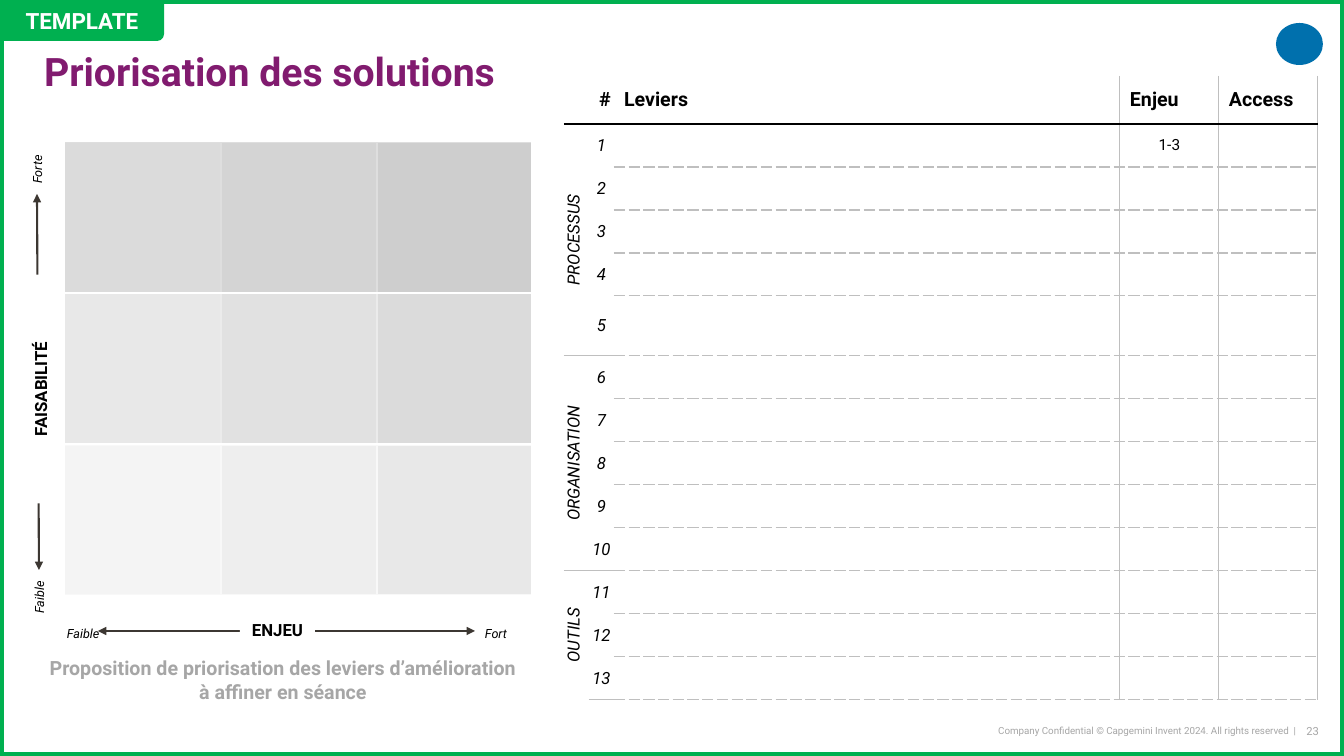
"""Build the solution prioritisation slide: a 3 x 3 matrix beside a table of levers."""
import pptx
import pptx.dml.color
import pptx.enum.dml
import pptx.enum.shapes
import pptx.enum.text
import pptx.oxml
import pptx.oxml.ns
import pptx.util

ALIGN = pptx.enum.text.PP_ALIGN
MIDDLE = pptx.enum.text.MSO_ANCHOR.MIDDLE
SHAPE = pptx.enum.shapes.MSO_SHAPE
FONT = "Roboto"
BLACK, WHITE, GREY, GREEN = "000000", "FFFFFF", "BFBFBF", "00B050"
SHADES = ["BFBFBF", "D9D9D9", "F2F2F2"]
rgb = pptx.dml.color.RGBColor.from_string


def px(*lengths):
    """Turn pixel lengths into EMU."""
    return [pptx.util.Emu(round(length * 914400 / 100.8)) for length in lengths]


def write(frame, text, size, color=BLACK, bold=False, italic=False, align=ALIGN.LEFT):
    """Put one formatted paragraph into a text frame."""
    para = frame.paragraphs[0]
    para.text = text
    para.alignment = align
    para.font.name = FONT
    para.font.size = pptx.util.Pt(size)
    para.font.bold = bold
    para.font.italic = italic
    para.font.color.rgb = rgb(color)


deck = pptx.Presentation()
deck.slide_width, deck.slide_height = px(1344, 756)
page = deck.slides.add_slide(deck.slide_layouts[5])

title = page.shapes.title
title.left, title.top, title.width, title.height = px(44, 34, 1207, 79)
frame = title.text_frame
frame.margin_left = frame.margin_right = frame.margin_top = frame.margin_bottom = 0
frame.vertical_anchor = MIDDLE
frame.auto_size = pptx.enum.text.MSO_AUTO_SIZE.NONE
write(frame, "Priorisation des solutions", 28, "811B6F", bold=True)
frame.paragraphs[0].line_spacing = 0.9

emblem = page.shapes.add_shape(SHAPE.OVAL, *px(1276, 23, 47, 42))
emblem.shadow.inherit = False
emblem.fill.solid()
emblem.fill.fore_color.rgb = rgb("0070AD")
emblem.line.fill.background()

columns = [(376 - 156 * i, 142, 157, 453, shade) for i, shade in enumerate(SHADES)]
rows = [(64, 141 + 152 * i - i // 2, 468, 152, shade) for i, shade in enumerate(SHADES)]
for *place, shade in columns + rows:
    band = page.shapes.add_shape(SHAPE.RECTANGLE, *px(*place))
    band.shadow.inherit = False
    band.fill.solid()
    band.fill.fore_color.rgb = rgb(shade)
    alpha = pptx.oxml.parse_xml(f'<a:alpha {pptx.oxml.ns.nsdecls("a")} val="50000"/>')
    band._element.spPr.find(".//" + pptx.oxml.ns.qn("a:srgbClr")).append(alpha)
    band.line.color.rgb = rgb(WHITE)
    band.line.width = pptx.util.Pt(2)

for ends in [(98, 631, 475, 631), (39, 570, 37, 194)]:
    axis = page.shapes.add_connector(pptx.enum.shapes.MSO_CONNECTOR.STRAIGHT, *px(*ends))
    axis.line.color.rgb = rgb("3C3732")
    axis.line.width = pptx.util.Pt(1.5)
    for tag in ("headEnd", "tailEnd"):
        axis.line._get_or_add_ln().append(pptx.oxml.parse_xml(
            f'<a:{tag} {pptx.oxml.ns.nsdecls("a")} type="triangle"/>'))
    axis._element.spPr.append(pptx.oxml.parse_xml(
        f'<a:effectLst {pptx.oxml.ns.nsdecls("a")}/>'))

for text, place, rotation in [("ENJEU", (240, 615, 75, 30), 0),
                              ("FAISABILITÉ", (-74, 374, 229, 30), 270)]:
    box = page.shapes.add_textbox(*px(*place))
    box.rotation = rotation
    box.fill.solid()
    box.fill.fore_color.rgb = rgb(WHITE)
    box.text_frame.word_wrap = True
    write(box.text_frame, text, 12, bold=True, align=ALIGN.CENTER)

for text, place, rotation in [("Fort", (475, 621, 44, 25), 0),
                              ("Faible", (57, 621, 54, 25), 0),
                              ("Forte", (12, 156, 50, 25), 270),
                              ("Faible", (12, 584, 54, 25), 270)]:
    box = page.shapes.add_textbox(*px(*place))
    box.rotation = rotation
    box.text_frame.word_wrap = False
    write(box.text_frame, text, 9, italic=True)

caption = page.shapes.add_textbox(*px(33, 651, 500, 57))
caption.text_frame.word_wrap = True
write(caption.text_frame,
      "Proposition de priorisation des leviers d’amélioration à affiner en séance",
      14, "A6A6A6", bold=True, align=ALIGN.CENTER)

groups = {1: ("PROCESSUS", 5), 6: ("ORGANISATION", 10), 11: ("OUTILS", 13)}
headings = ["", "#", "Leviers", "Enjeu", "Access"]
levers = page.shapes.add_table(14, 5, *px(564, 76, 754, 624)).table
levers.first_row = levers.horz_banding = False
for column, width in zip(levers.columns, px(25, 25, 506, 99, 99)):
    column.width = width
for row, height in zip(levers.rows, px(48, *[43] * 4, 60, *[43] * 8)):
    row.height = height

for r in range(14):
    for c in range(5):
        cell = levers.cell(r, c)
        properties = cell._tc.get_or_add_tcPr()
        edges = {"lnL": (GREY, "solid") if c > 2 else None,
                 "lnR": (GREY, "solid") if c > 1 else None}
        for side, edge in (("lnT", r), ("lnB", r + 1)):
            if edge == 1:
                edges[side] = (BLACK, "solid")
            elif edge and c > 1:
                edges[side] = (GREY, "lgDash")
            else:
                edges[side] = (GREY, "solid") if edge in (6, 11, 14) else None
        for side, style in edges.items():
            stroke = "<a:noFill/>"
            if style:
                stroke = (f'<a:solidFill><a:srgbClr val="{style[0]}"/></a:solidFill>'
                          f'<a:prstDash val="{style[1]}"/>')
            properties.append(pptx.oxml.parse_xml(
                f'<a:{side} {pptx.oxml.ns.nsdecls("a")} w="12700">{stroke}</a:{side}>'))
        cell.fill.solid()
        cell.fill.fore_color.rgb = rgb(WHITE)
        cell.vertical_anchor = MIDDLE
        if r == 0:
            write(cell.text_frame, headings[c], 14, bold=True,
                  align=ALIGN.CENTER if c == 1 else ALIGN.LEFT)
            continue
        if c < 2:
            cell.margin_left = cell.margin_right = 0
            cell.margin_top = cell.margin_bottom = 0
        if c == 1:
            write(cell.text_frame, str(r), 12, italic=True, align=ALIGN.CENTER)
        if c == 0 and r in groups:
            name, last = groups[r]
            cell.merge(levers.cell(last, 0))
            properties.set("vert", "vert270")
            write(cell.text_frame, name, 12, italic=True, align=ALIGN.CENTER)
write(levers.cell(1, 3).text_frame, "1-3", 11, align=ALIGN.CENTER)

for text, place, size, margin in [
        ("23", (1294, 719, 25, 24), 8, 5),
        ("Company Confidential © Capgemini Invent 2024. All rights reserved  |",
         (796, 719, 500, 24), 7, 0)]:
    box = page.shapes.add_textbox(*px(*place))
    frame = box.text_frame
    frame.word_wrap = True
    frame.margin_left = frame.margin_right = 0
    frame.margin_top, frame.margin_bottom = px(margin, margin)
    frame.vertical_anchor = MIDDLE
    write(frame, text, size, "A6A6A6", align=ALIGN.RIGHT)

border = page.shapes.add_shape(SHAPE.RECTANGLE, *px(0, 0, 1344, 756))
border.shadow.inherit = False
border.fill.background()
border.line.color.rgb = rgb(GREEN)
border.line.width = pptx.util.Pt(6)

badge = page.shapes.add_shape(SHAPE.ROUND_2_DIAG_RECTANGLE, *px(0, 0, 164, 41))
badge.shadow.inherit = False
badge.fill.solid()
badge.fill.fore_color.rgb = rgb(GREEN)
badge.line.fill.background()
badge.text_frame.vertical_anchor = MIDDLE
write(badge.text_frame, "TEMPLATE", 16, WHITE, bold=True, align=ALIGN.CENTER)

deck.save("out.pptx")
